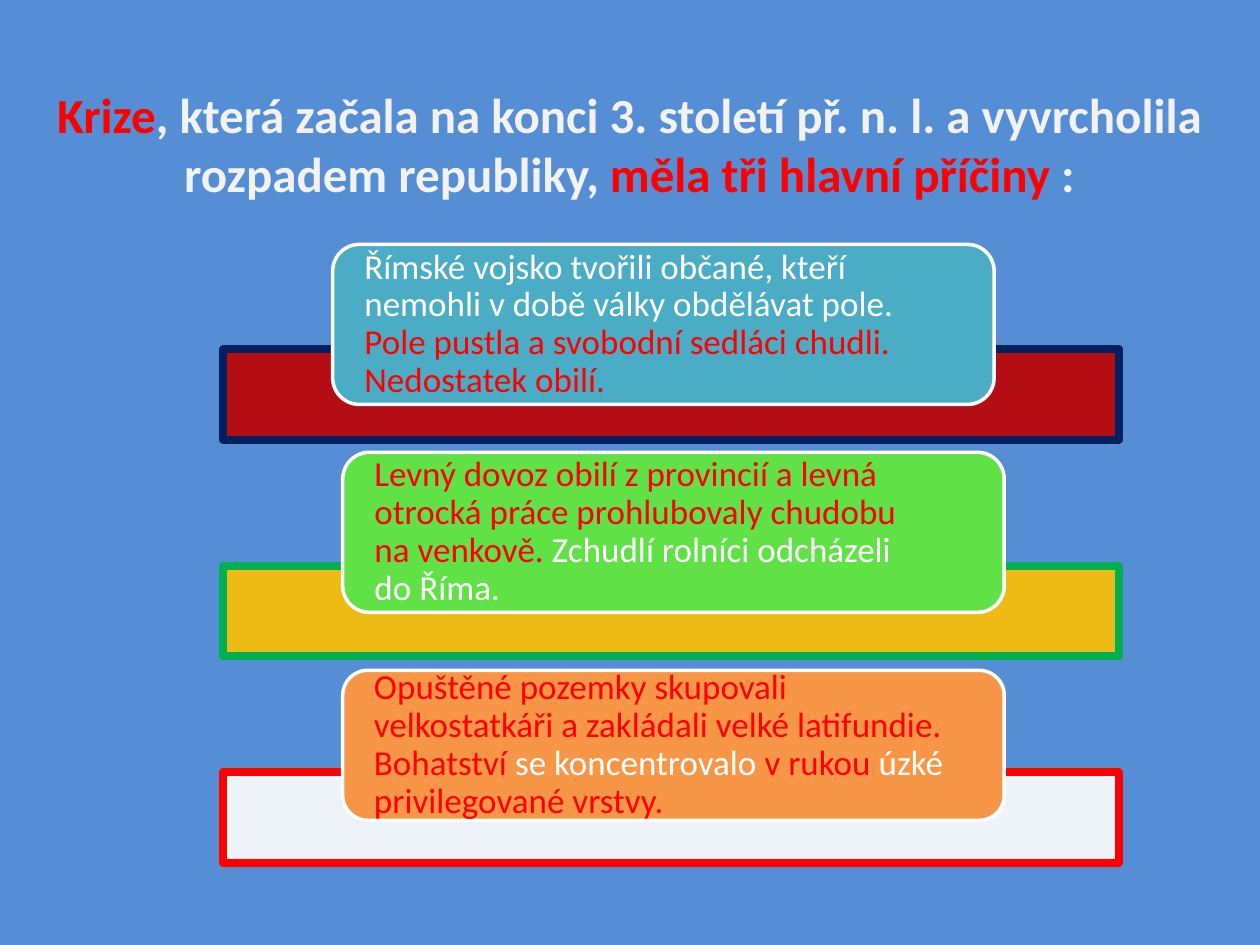
from lxml import etree
from pptx import Presentation
from pptx import util as u
from pptx.dml.color import RGBColor
from pptx.enum import shapes, text
from pptx.oxml import ns

BLUE = RGBColor(0x55, 0x8E, 0xD5)
RED = RGBColor(0xFF, 0x00, 0x00)
WHITE = RGBColor(0xFF, 0xFF, 0xFF)
PALE = RGBColor(0xF2, 0xF2, 0xF2)
WINE = RGBColor(0xC0, 0x00, 0x00)
NAVY = RGBColor(0x00, 0x20, 0x60)
GOLD = RGBColor(0xFF, 0xC0, 0x00)
GREEN = RGBColor(0x00, 0xB0, 0x50)
TEAL = RGBColor(0x4B, 0xAC, 0xC6)
LIME = RGBColor(0x60, 0xE1, 0x46)
AMBER = RGBColor(0xF7, 0x96, 0x46)

TITLE = [
    ("Krize", RED),
    (", která začala na konci 3. století př. n. l. a vyvrcholila rozpadem republiky, ", PALE),
    ("měla tři hlavní příčiny", RED),
    (" :", PALE),
]
ARMY = [
    ("Římské vojsko tvořili občané, kteří nemohli v době války obdělávat pole.\n", WHITE),
    ("Pole pustla a svobodní sedláci chudli. Nedostatek obilí.", RED),
]
GRAIN = [
    ("Levný dovoz obilí z provincií a levná otrocká práce prohlubovaly chudobu\nna venkově.", RED),
    (" Zchudlí rolníci odcházeli\ndo Říma.", WHITE),
]
LAND = [
    ("Opuštěné pozemky skupovali velkostatkáři a zakládali velké latifundie. Bohatství", RED),
    (" se koncentrovalo ", WHITE),
    ("v rukou ", RED),
    ("úzké ", WHITE),
    ("privilegované vrstvy.", RED),
]
CAUSES = [
    (2.77, WINE, NAVY, (2.64, 1.94, 5.25, 1.27), TEAL, ARMY),
    (4.49, GOLD, GREEN, (2.72, 3.59, 5.25, 1.27), LIME, GRAIN),
    (6.13, WHITE, RED, (2.72, 5.32, 5.25, 1.19), AMBER, LAND),
]


def write(para, words, font="Calibri", size=20, color=WHITE, bold=False):
    for i, line in enumerate(words.split("\n")):
        if i:
            para.add_line_break()
        if line:
            run = para.add_run()
            run.text = line
            run.font.name = font
            run.font.size = u.Pt(size)
            run.font.bold = bold
            run.font.color.rgb = color


class Deck:
    """Holds the style and the current slide, and draws each kind of element."""

    def __init__(self, font="Calibri"):
        self.font = font
        self.prs = Presentation()
        self.prs.slide_width = u.Inches(10)
        self.prs.slide_height = u.Inches(7.5)
        self.slide = self.prs.slides.add_slide(self.prs.slide_layouts[6])
        fill = self.slide.background.fill
        fill.solid()
        fill.fore_color.rgb = BLUE

    def shape(self, kind, box, fill, edge, width):
        item = self.slide.shapes.add_shape(kind, *map(u.Inches, box))
        item.shadow.inherit = False
        item.fill.solid()
        item.fill.fore_color.rgb = fill
        item.line.color.rgb = edge
        item.line.width = u.Pt(width)
        return item

    def bar(self, box, fill, edge):
        item = self.shape(shapes.MSO_SHAPE.RECTANGLE, box, fill, edge, 4.5)
        tint = item.fill._xPr.find(ns.qn("a:solidFill"))[0]
        etree.SubElement(tint, ns.qn("a:alpha"), val="90000")

    def card(self, box, fill, parts):
        item = self.shape(shapes.MSO_SHAPE.ROUNDED_RECTANGLE, box, fill, WHITE, 2)
        frame = item.text_frame
        frame.word_wrap = True
        frame.vertical_anchor = text.MSO_ANCHOR.MIDDLE
        frame.margin_left = frame.margin_right = u.Inches(0.19)
        frame.margin_top = frame.margin_bottom = 0
        para = frame.paragraphs[0]
        para.alignment = text.PP_ALIGN.LEFT
        para.line_spacing = 0.9
        for words, color in parts:
            write(para, words, font=self.font, color=color)

    def title(self, box, parts):
        frame = self.slide.shapes.add_textbox(*map(u.Inches, box)).text_frame
        frame.word_wrap = True
        frame.auto_size = text.MSO_AUTO_SIZE.SHAPE_TO_FIT_TEXT
        para = frame.paragraphs[0]
        para.alignment = text.PP_ALIGN.CENTER
        for words, color in parts:
            write(para, words, font=self.font, size=28, color=color, bold=True)


def main():
    deck = Deck()
    for top, fill, edge, box, tone, parts in CAUSES:
        deck.bar((1.77, top, 7.11, 0.72), fill, edge)
        deck.card(box, tone, parts)
    deck.title((0.23, 0.62, 9.53, 1.04), TITLE)
    deck.prs.save("out.pptx")


if __name__ == "__main__":
    main()
